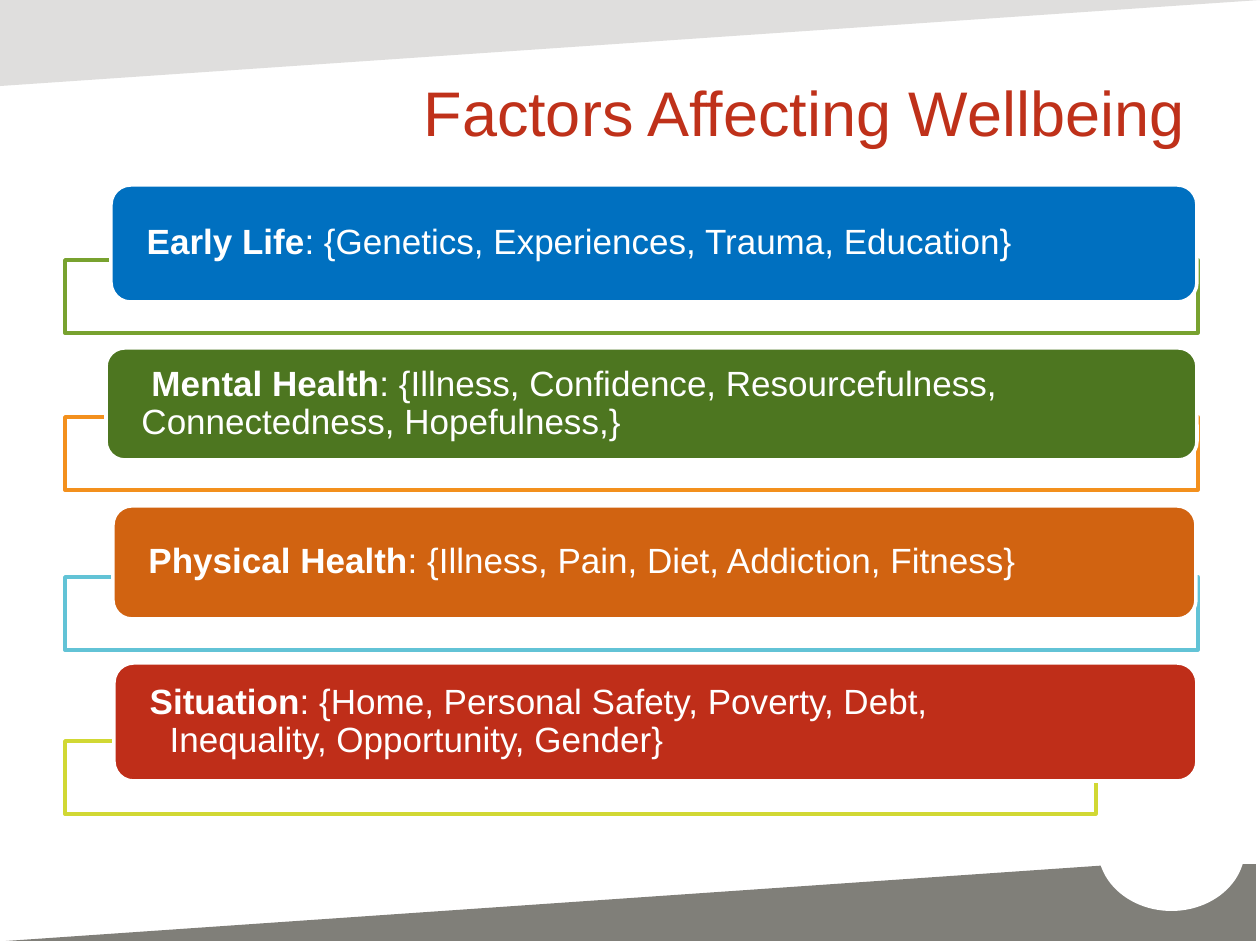
"""Build the Factors Affecting Wellbeing slide."""
import pptx
import pptx.dml.color
import pptx.enum.shapes
import pptx.enum.text
import pptx.util

SCALE = pptx.util.Inches(1) / 126
THEME = {
    "font": "Arial", "title_size": 36, "card_size": 20, "line": 2,
    "title": "BF311A", "white": "FFFFFF", "dark": "807F79", "pale": "DFDEDD",
    "green": "78A22F", "orange": "F3901D", "cyan": "62C3D6", "lime": "D1D834",
    "blue": "0070C0", "forest": "4D7620", "rust": "D16311", "red": "BF2E19",
}
KINDS = pptx.enum.shapes.MSO_SHAPE


def px(length):
    return pptx.util.Emu(round(length * SCALE))


def add_box(kind, bounds, fill, line=None):
    box = page.shapes.add_shape(kind, *map(px, bounds))
    box.shadow.inherit = False
    box.fill.solid()
    box.fill.fore_color.rgb = pptx.dml.color.RGBColor.from_string(THEME[fill])
    if line:
        box.line.color.rgb = pptx.dml.color.RGBColor.from_string(THEME[line])
        box.line.width = pptx.util.Pt(THEME["line"])
    else:
        box.line.fill.background()
    return box


deck = pptx.Presentation()
deck.slide_width, deck.slide_height = px(1260), px(945)
page = deck.slides.add_slide(deck.slide_layouts[6])

bottom_wedge = add_box(KINDS.ISOSCELES_TRIANGLE, (6, 855, 1250, 86), "dark")
bottom_wedge.adjustments[0] = 1
add_box(KINDS.OVAL, (1098, 786, 147, 125), "white")
add_box(KINDS.RECTANGLE, (1172, 786, 88, 78), "white")
top_wedge = add_box(KINDS.ISOSCELES_TRIANGLE, (0, 0, 1260, 86), "pale")
top_wedge.adjustments[0] = 1
top_wedge.rotation = 180

title = page.shapes.add_textbox(*map(px, (282, 67, 915, 88)))
title.text_frame.word_wrap = True
title.text_frame.vertical_anchor = pptx.enum.text.MSO_ANCHOR.MIDDLE
para = title.text_frame.paragraphs[0]
para.text = "Factors Affecting Wellbeing"
para.alignment = pptx.enum.text.PP_ALIGN.RIGHT
para.font.name = THEME["font"]
para.font.size = pptx.util.Pt(THEME["title_size"])
para.font.color.rgb = pptx.dml.color.RGBColor.from_string(THEME["title"])

FACTORS = [
    ("Early Life", [": {Genetics, Experiences, Trauma, Education}"],
     (111, 185, 1086, 117), "blue", (260, 1133), "green", (0, 0)),
    ("Mental Health", [": {Illness, Confidence, Resourcefulness,", "Connectedness, Hopefulness,}"],
     (106, 348, 1091, 112), "forest", (417, 1133), "orange", (0, 10)),
    ("Physical Health", [": {Illness, Pain, Diet, Addiction, Fitness}"],
     (113, 506, 1083, 113), "rust", (577, 1133), "cyan", (0, 0)),
    ("Situation", [": {Home, Personal Safety, Poverty, Debt,", "Inequality, Opportunity, Gender}"],
     (114, 663, 1083, 118), "red", (741, 1031), "lime", (20, -20)),
]

for name, details, bounds, fill, (frame_top, frame_width), outline, (margin, indent) in FACTORS:
    add_box(KINDS.RECTANGLE, (65, frame_top, frame_width, 73), "white", outline)
    card = add_box(KINDS.ROUNDED_RECTANGLE, bounds, fill, "white")
    frame = card.text_frame
    frame.word_wrap = True
    frame.vertical_anchor = pptx.enum.text.MSO_ANCHOR.MIDDLE
    frame.margin_left = frame.margin_right = px(30)
    frame.margin_top = frame.margin_bottom = 0
    para = frame.paragraphs[0]
    para.alignment = pptx.enum.text.PP_ALIGN.LEFT
    para.line_spacing = 0.9
    properties = para._p.get_or_add_pPr()
    properties.set("marL", str(px(margin)))
    properties.set("indent", str(px(indent)))
    para.font.name = THEME["font"]
    para.font.size = pptx.util.Pt(THEME["card_size"])
    para.font.color.rgb = pptx.dml.color.RGBColor.from_string(THEME["white"])
    span = para.add_run()
    span.text = name
    span.font.bold = True
    for index, detail in enumerate(details):
        if index:
            para.add_line_break()
        para.add_run().text = detail

deck.save("out.pptx")
